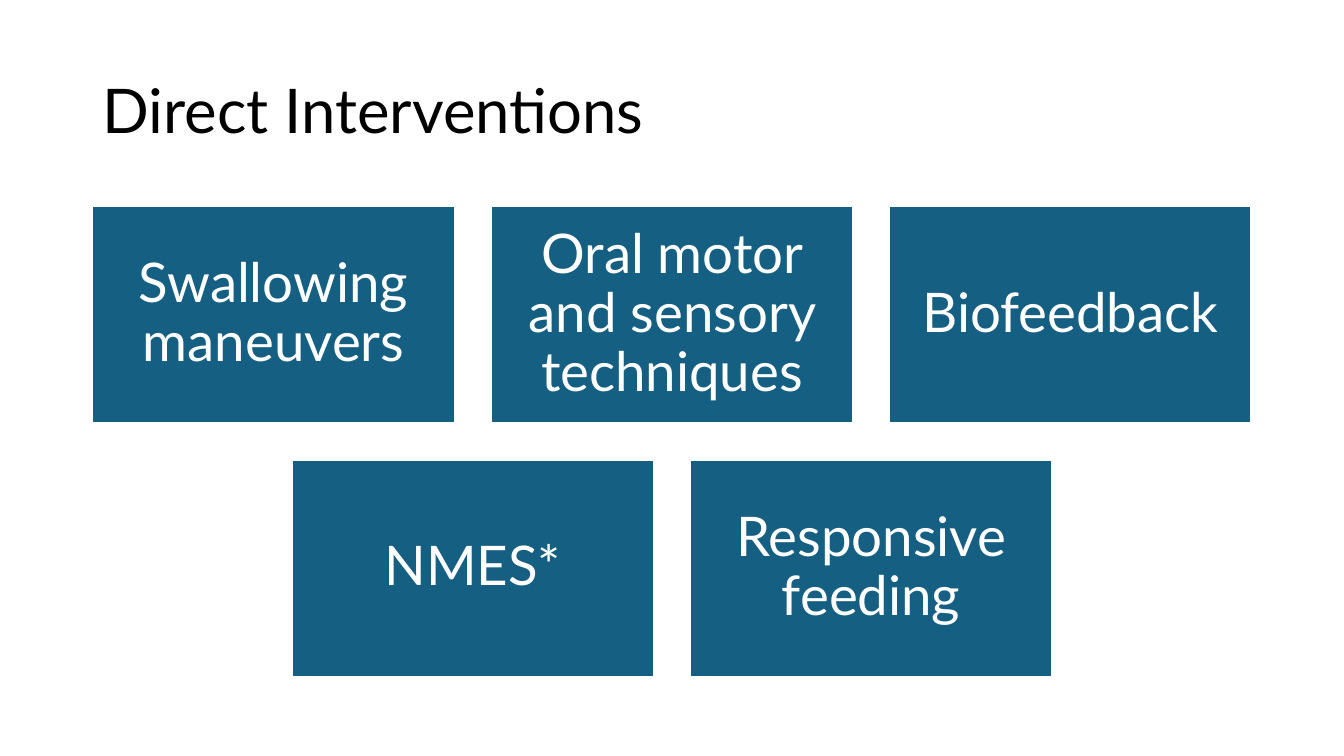
from dataclasses import dataclass

from pptx import Presentation
from pptx.dml.color import RGBColor
from pptx.enum.shapes import MSO_SHAPE
from pptx.enum.text import MSO_ANCHOR, MSO_AUTO_SIZE, PP_ALIGN
from pptx.util import Cm, Pt

RECT = MSO_SHAPE.RECTANGLE
MIDDLE = MSO_ANCHOR.MIDDLE
FIXED = MSO_AUTO_SIZE.NONE
LEFT, CENTER = PP_ALIGN.LEFT, PP_ALIGN.CENTER

WIDTH, HEIGHT = 33.87, 19.05
CARD_W, CARD_H, GAP = 9.13, 5.48, 0.91
TOP = 5.19
ROWS = [
    ["Swallowing maneuvers", "Oral motor and sensory techniques", "Biofeedback"],
    ["NMES*", "Responsive feeding"],
]


@dataclass
class Theme:
    font: str = "Lato"
    ink: RGBColor = RGBColor(0, 0, 0)
    paper: RGBColor = RGBColor(255, 255, 255)
    teal: RGBColor = RGBColor(0x15, 0x60, 0x82)
    title: int = 44
    card: int = 39


def write(frame, text, *, font, size, color, align, inset=None):
    frame.text = text
    frame.word_wrap = True
    frame.auto_size = FIXED
    frame.vertical_anchor = MIDDLE
    if inset is not None:
        frame.margin_left = frame.margin_right = Cm(inset)
        frame.margin_top = frame.margin_bottom = Cm(inset)
    para = frame.paragraphs[0]
    para.alignment = align
    para.line_spacing = 0.9
    face = para.runs[0].font
    face.name = font
    face.size = Pt(size)
    face.color.rgb = color


class Deck:
    def __init__(self, theme):
        self.theme = theme
        self.show = Presentation()
        self.show.slide_width = Cm(WIDTH)
        self.show.slide_height = Cm(HEIGHT)
        self.slide = self.show.slides.add_slide(self.show.slide_layouts[5])

    def title(self, text, left, top, width, height):
        head = self.slide.shapes.title
        head.left, head.top = Cm(left), Cm(top)
        head.width, head.height = Cm(width), Cm(height)
        write(head.text_frame, text, font=self.theme.font,
              size=self.theme.title, color=self.theme.ink, align=LEFT)

    def card(self, text, left, top):
        box = self.slide.shapes.add_shape(
            RECT, Cm(left), Cm(top), Cm(CARD_W), Cm(CARD_H))
        box.shadow.inherit = False
        box.fill.solid()
        box.fill.fore_color.rgb = self.theme.teal
        box.line.color.rgb = self.theme.paper
        box.line.width = Pt(1.5)
        write(box.text_frame, text, font=self.theme.font,
              size=self.theme.card, color=self.theme.paper,
              align=CENTER, inset=0.41)

    def row(self, texts, top):
        span = len(texts) * (CARD_W + GAP) - GAP
        start = (WIDTH - span) / 2
        for col, text in enumerate(texts):
            self.card(text, start + col * (CARD_W + GAP), top)


def main():
    deck = Deck(Theme())
    deck.title("Direct Interventions", 2.33, 1.01, 29.21, 3.68)
    for index, texts in enumerate(ROWS):
        deck.row(texts, TOP + index * (CARD_H + GAP))
    deck.show.save("out.pptx")


if __name__ == "__main__":
    main()
